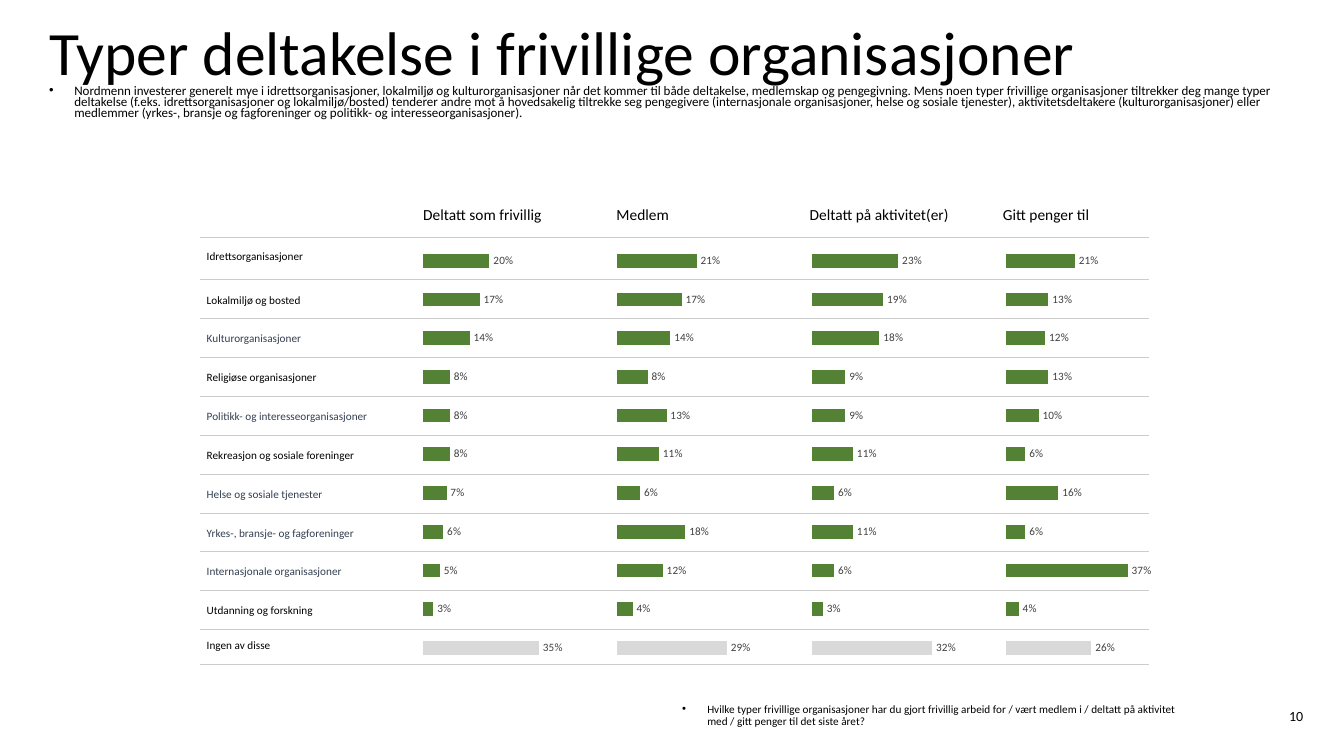
"""Build the slide on types of participation in voluntary organisations."""
from dataclasses import dataclass

from lxml import etree
from pptx import Presentation
from pptx.chart.data import CategoryChartData
from pptx.dml.color import RGBColor
from pptx.enum.chart import XL_CHART_TYPE, XL_LABEL_POSITION
from pptx.enum.shapes import MSO_CONNECTOR
from pptx.enum.text import MSO_ANCHOR, MSO_AUTO_SIZE, PP_ALIGN
from pptx.oxml import parse_xml
from pptx.oxml.ns import nsdecls, qn
from pptx.util import Cm, Pt

BAR = XL_CHART_TYPE.BAR_CLUSTERED
OUTSIDE_END = XL_LABEL_POSITION.OUTSIDE_END
STRAIGHT = MSO_CONNECTOR.STRAIGHT
TOP, MIDDLE = MSO_ANCHOR.TOP, MSO_ANCHOR.MIDDLE
LEFT, RIGHT = PP_ALIGN.LEFT, PP_ALIGN.RIGHT
NO_AUTOFIT = MSO_AUTO_SIZE.NONE
NO_TABLE_STYLE = "{2D5ABB26-0587-4C30-8999-92F81FD0307C}"


@dataclass(frozen=True)
class Theme:
    font: str = "Calibri"
    black: RGBColor = RGBColor(0x00, 0x00, 0x00)
    slate: RGBColor = RGBColor(0x33, 0x3F, 0x50)
    value: RGBColor = RGBColor(0x40, 0x40, 0x40)
    green: RGBColor = RGBColor(0x54, 0x82, 0x35)
    grey: RGBColor = RGBColor(0xD9, 0xD9, 0xD9)
    rule: RGBColor = RGBColor(0xCC, 0xCC, 0xCC)
    title: float = 44
    header: float = 11
    page: float = 10
    intro: float = 9.3
    small: float = 8


THEME = Theme()


def write(frame, text, size, color=THEME.black, align=LEFT, spacing=1.0, bullet=False):
    """Put one formatted paragraph into a text frame."""
    frame.word_wrap = True
    paragraph = frame.paragraphs[0]
    paragraph.alignment = align
    paragraph.line_spacing = spacing
    if bullet:
        properties = paragraph._p.get_or_add_pPr()
        properties.set("marL", str(Cm(0.635)))
        properties.set("indent", str(Cm(-0.635)))
        etree.SubElement(properties, qn("a:buFont")).set("typeface", "Arial")
        etree.SubElement(properties, qn("a:buChar")).set("char", "•")
    run = paragraph.add_run()
    run.text = text
    run.font.name = THEME.font
    run.font.size = Pt(size)
    run.font.color.rgb = color


def add_plain_table(rows, columns, left, top, width, height):
    """Add a table without style, banding or fills."""
    table = slide.shapes.add_table(rows, columns, left, top, width, height).table
    table.first_row = table.horz_banding = False
    table._tbl.tblPr.find(qn("a:tableStyleId")).text = NO_TABLE_STYLE
    for cell in table.iter_cells():
        cell.fill.background()
    return table


presentation = Presentation()
presentation.slide_width = Cm(33.87)
presentation.slide_height = Cm(19.05)
slide = presentation.slides.add_slide(presentation.slide_layouts[5])

title = slide.shapes.title
title.left, title.top, title.width, title.height = Cm(0.99), Cm(0.81), Cm(31.85), Cm(1.17)
title.text_frame.auto_size = NO_AUTOFIT
title.text_frame.vertical_anchor = MIDDLE
write(title.text_frame, "Typer deltakelse i frivillige organisasjoner", THEME.title, spacing=0.9)

intro = slide.shapes.add_textbox(Cm(0.99), Cm(2.06), Cm(31.85), Cm(1.09))
write(
    intro.text_frame,
    "Nordmenn investerer generelt mye i idrettsorganisasjoner, lokalmiljø og kulturorganisasjoner "
    "når det kommer til både deltakelse, medlemskap og pengegivning. Mens noen typer frivillige "
    "organisasjoner tiltrekker deg mange typer deltakelse (f.eks. idrettsorganisasjoner og "
    "lokalmiljø/bosted) tenderer andre mot å hovedsakelig tiltrekke seg pengegivere (internasjonale "
    "organisasjoner, helse og sosiale tjenester), aktivitetsdeltakere (kulturorganisasjoner) eller "
    "medlemmer (yrkes-, bransje og fagforeninger og politikk- og interesseorganisasjoner).",
    THEME.intro, spacing=0.7, bullet=True,
)

question = slide.shapes.add_textbox(Cm(16.94), Cm(17.78), Cm(13.06), Cm(0.51))
question.text_frame.vertical_anchor = MIDDLE
write(
    question.text_frame,
    "Hvilke typer frivillige organisasjoner har du gjort frivillig arbeid for / vært medlem i / "
    "deltatt på aktivitet med / gitt penger til det siste året?",
    THEME.small, spacing=0.9, bullet=True,
)

page_number = slide.shapes.add_textbox(Cm(30.15), Cm(17.78), Cm(2.69), Cm(0.51))
page_frame = page_number.text_frame
page_frame.margin_left = page_frame.margin_right = page_frame.margin_top = page_frame.margin_bottom = 0
page_frame.vertical_anchor = MIDDLE
write(page_frame, "10", THEME.page, align=RIGHT)

organisations = [
    ("Idrettsorganisasjoner", THEME.black),
    ("Lokalmiljø og bosted", THEME.black),
    ("Kulturorganisasjoner", THEME.slate),
    ("Religiøse organisasjoner", THEME.black),
    ("Politikk- og interesseorganisasjoner", THEME.slate),
    ("Rekreasjon og sosiale foreninger", THEME.black),
    ("Helse og sosiale tjenester", THEME.slate),
    ("Yrkes-, bransje- og fagforeninger", THEME.slate),
    ("Internasjonale organisasjoner", THEME.slate),
    ("Utdanning og forskning", THEME.black),
    ("Ingen av disse", THEME.black),
]
last = len(organisations) - 1
row_labels = add_plain_table(len(organisations), 1, Cm(5.18), Cm(5.97), Cm(5.05), Cm(10.77))
for row, (organisation, color) in enumerate(organisations):
    cell = row_labels.cell(row, 0)
    cell.vertical_anchor = MIDDLE
    cell.margin_left = cell.margin_right = Cm(0.03)
    cell.margin_top = Cm(0.03 if row in (0, last) else 0.25)
    cell.margin_bottom = 0
    write(cell.text_frame, organisation, THEME.small, color)

participation = [
    ("Deltatt som frivillig", 0.4, [20, 17, 14, 8, 8, 8, 7, 6, 5, 3, 35]),
    ("Medlem", 0.35, [21, 17, 14, 8, 13, 11, 6, 18, 12, 4, 29]),
    ("Deltatt på aktivitet(er)", 0.35, [23, 19, 18, 9, 9, 11, 6, 11, 6, 3, 32]),
    ("Gitt penger til", 0.4, [21, 13, 12, 13, 10, 6, 16, 6, 37, 4, 26]),
]
PLOT_LAYOUT = (
    f'<c:layout {nsdecls("c")}><c:manualLayout><c:layoutTarget val="inner"/>'
    '<c:xMode val="edge"/><c:yMode val="edge"/><c:x val="0.032"/><c:y val="0.034"/>'
    '<c:w val="0.81"/><c:h val="0.931"/></c:manualLayout></c:layout>'
)
for column, (kind, axis_maximum, percentages) in enumerate(participation):
    shares = CategoryChartData(number_format="###0%")
    shares.categories = [organisation for organisation, color in organisations]
    shares.add_series(kind, [percentage / 100 for percentage in percentages])
    chart = slide.shapes.add_chart(
        BAR, Cm(10.54 + 4.89 * column), Cm(5.69), Cm(4.11), Cm(11.53), shares
    ).chart
    chart.has_title = chart.has_legend = False
    chart.font.name = THEME.font
    chart.font.size = Pt(THEME.page)
    chart.font.color.rgb = THEME.black
    chart.category_axis.reverse_order = True
    chart.category_axis.visible = chart.value_axis.visible = False
    chart.value_axis.has_major_gridlines = False
    chart.value_axis.minimum_scale = 0
    chart.value_axis.maximum_scale = axis_maximum

    plot = chart.plots[0]
    plot.gap_width = 182
    plot.vary_by_categories = False
    bars = plot.series[0]
    bars.format.fill.solid()
    bars.format.fill.fore_color.rgb = THEME.green
    none_bar = bars.points[last].format.fill
    none_bar.solid()
    none_bar.fore_color.rgb = THEME.grey
    labels = bars.data_labels
    labels.show_value = True
    labels.position = OUTSIDE_END
    labels.number_format = "###0%"
    labels.number_format_is_linked = False
    labels.font.name = THEME.font
    labels.font.size = Pt(THEME.small)
    labels.font.color.rgb = THEME.value

    plot_area = chart._chartSpace.chart.plotArea
    for layout in plot_area.findall(qn("c:layout")):
        plot_area.remove(layout)
    plot_area.insert(0, parse_xml(PLOT_LAYOUT))

for height in [5.97, *(7.04 + 0.98 * step for step in range(last)), 16.74]:
    rule = slide.shapes.add_connector(STRAIGHT, Cm(5.05), Cm(height), Cm(28.96), Cm(height))
    rule.line.color.rgb = THEME.rule
    rule.line.width = Pt(0.25)
    etree.SubElement(rule._element.spPr, qn("a:effectLst"))

headers = add_plain_table(1, len(participation), Cm(10.41), Cm(5.05), Cm(19.48), Cm(1.04))
for column, (kind, axis_maximum, percentages) in enumerate(participation):
    headers.cell(0, column).vertical_anchor = TOP
    write(headers.cell(0, column).text_frame, kind, THEME.header)

presentation.save("out.pptx")
